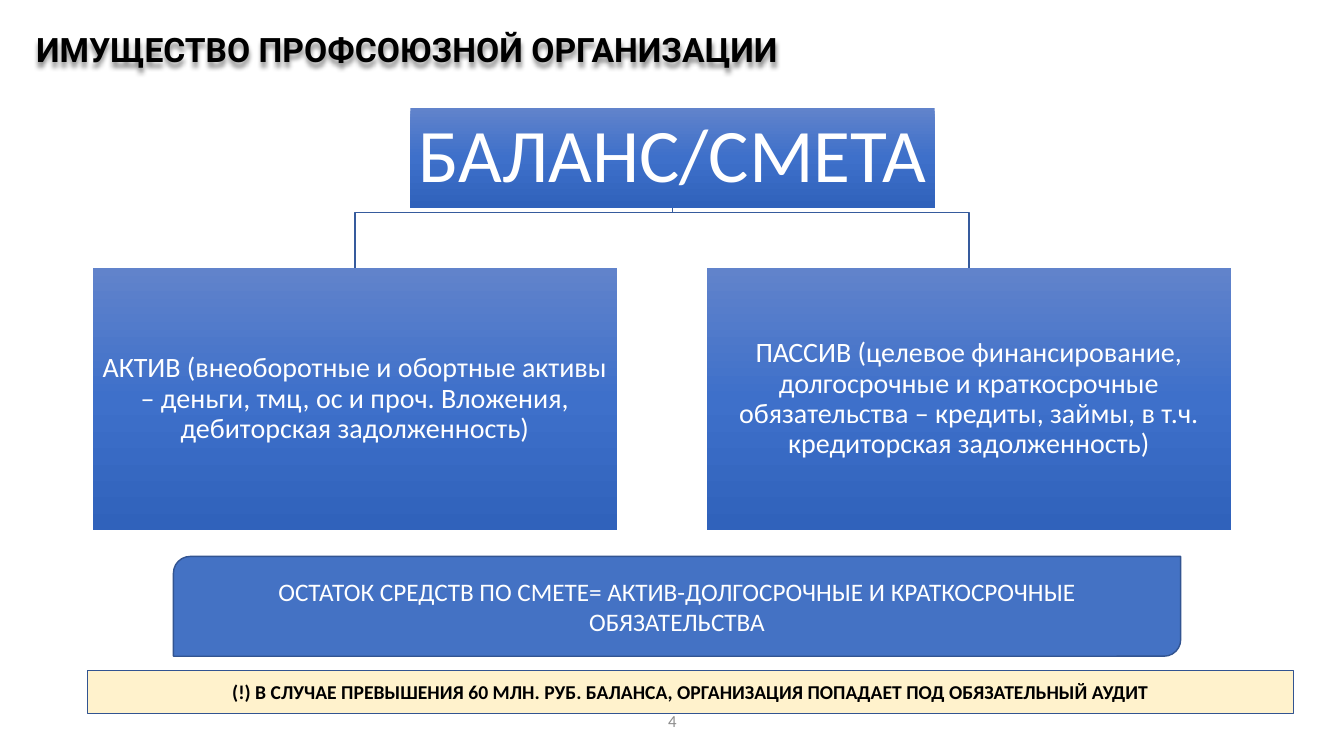
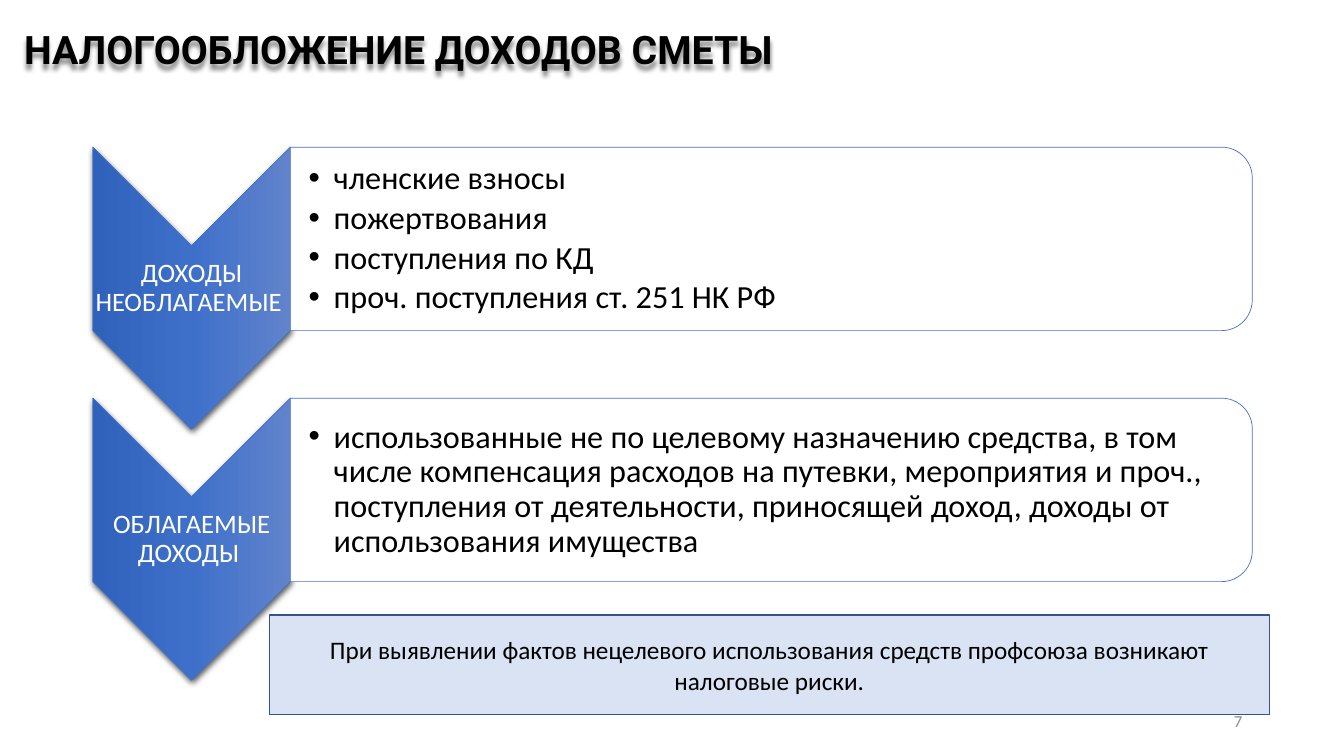
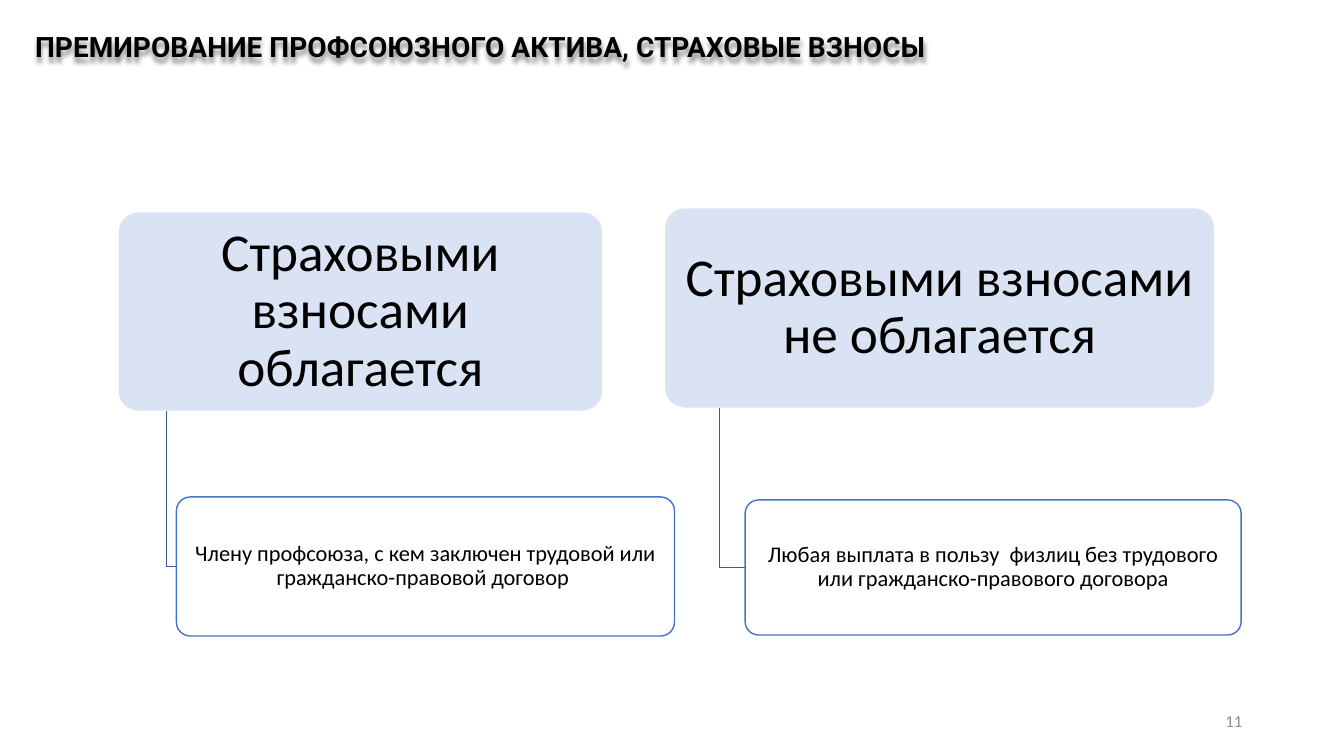
from copy import deepcopy

from lxml import etree
from pptx import Presentation
from pptx.dml.color import RGBColor
from pptx.enum.shapes import MSO_SHAPE
from pptx.enum.text import MSO_ANCHOR, PP_ALIGN
from pptx.oxml.ns import qn
from pptx.util import Inches, Pt

RECTANGLE = MSO_SHAPE.RECTANGLE
ROUNDED = MSO_SHAPE.ROUNDED_RECTANGLE
DIAGONAL_ROUNDED = MSO_SHAPE.ROUND_2_DIAG_RECTANGLE
SAME_SIDE_ROUNDED = MSO_SHAPE.ROUND_2_SAME_RECTANGLE
CHEVRON = MSO_SHAPE.CHEVRON
LEFT, CENTER, RIGHT = PP_ALIGN.LEFT, PP_ALIGN.CENTER, PP_ALIGN.RIGHT
MIDDLE = MSO_ANCHOR.MIDDLE

BLACK = RGBColor(0x00, 0x00, 0x00)
WHITE = RGBColor(0xFF, 0xFF, 0xFF)
GRAY = RGBColor(0x8C, 0x8C, 0x8C)
BLUE = RGBColor(0x44, 0x72, 0xC4)
DARK_BLUE = RGBColor(0x32, 0x54, 0x91)
LINK_BLUE = RGBColor(0x36, 0x5B, 0x9D)
PALE_BLUE = RGBColor(0xDA, 0xE3, 0xF3)
PALE_YELLOW = RGBColor(0xFF, 0xF2, 0xCC)
GRADIENT = (
    RGBColor(0x61, 0x83, 0xCB),
    RGBColor(0x3E, 0x70, 0xCA),
    RGBColor(0x30, 0x62, 0xBB),
)

BODY_FONT = "Calibri"
TITLE_FONT = "Roboto"
TIGHT = 0.9


def write(shape, *lines, size, color=BLACK, font=BODY_FONT, bold=False, align=CENTER,
          inset=(0.1, 0.05, 0.1, 0.05), line_spacing=1.0, space_after=0, bullets=False):
    """Fill a shape with one paragraph per line; inset is left, top, right, bottom."""
    frame = shape.text_frame
    frame.word_wrap = True
    frame.vertical_anchor = MIDDLE
    (frame.margin_left, frame.margin_top,
     frame.margin_right, frame.margin_bottom) = map(Inches, inset)
    for index, line in enumerate(lines):
        paragraph = frame.add_paragraph() if index else frame.paragraphs[0]
        paragraph.alignment = align
        paragraph.line_spacing = line_spacing
        paragraph.space_after = Pt(space_after)
        if bullets:
            add_bullet(paragraph)
        run = paragraph.add_run()
        run.text = line
        run.font.name = font
        run.font.size = Pt(size)
        run.font.bold = bold
        run.font.color.rgb = color


def add_bullet(paragraph):
    properties = paragraph._p.get_or_add_pPr()
    properties.set("marL", str(Inches(0.25)))
    properties.set("indent", str(-Inches(0.25)))
    etree.SubElement(properties, qn("a:buFont"), typeface="Arial")
    etree.SubElement(properties, qn("a:buChar"), char="•")


def add_shadow(shape, blur, distance, opacity):
    """Cast a black shadow straight down; blur and distance are in points."""
    shape.shadow.inherit = False
    effects = shape._element.spPr.find(qn("a:effectLst"))
    shadow = etree.SubElement(effects, qn("a:outerShdw"), blurRad=str(Pt(blur)),
                              dist=str(Pt(distance)), dir="5400000", rotWithShape="0")
    color = etree.SubElement(shadow, qn("a:srgbClr"), val=str(BLACK))
    etree.SubElement(color, qn("a:alpha"), val=str(opacity * 1000))


def fill_gradient(shape):
    shape.fill.gradient()
    shape.fill.gradient_angle = 270
    stop_list = shape.fill._xPr.find(qn("a:gradFill")).find(qn("a:gsLst"))
    stop_list.insert(1, deepcopy(stop_list[0]))
    for index, (stop, color) in enumerate(zip(shape.fill.gradient_stops, GRADIENT)):
        stop.position = index / 2
        stop.color.rgb = color


def add_box(slide, kind, left, top, width, height, fill=None, line=None, line_width=1,
            quarter_turn=False):
    """Add a shape covering the given area; without a fill colour it gets the gradient."""
    if quarter_turn:
        shift = (width - height) / 2
        left, top, width, height = left + shift, top - shift, height, width
    shape = slide.shapes.add_shape(kind, *map(Inches, (left, top, width, height)))
    shape.shadow.inherit = False
    if quarter_turn:
        shape.rotation = 90
    if fill is None:
        fill_gradient(shape)
    else:
        shape.fill.solid()
        shape.fill.fore_color.rgb = fill
    if line is None:
        shape.line.fill.background()
    else:
        shape.line.color.rgb = line
        shape.line.width = Pt(line_width)
    return shape


def add_text(slide, left, top, width, height, *lines, **text_format):
    box = slide.shapes.add_textbox(*map(Inches, (left, top, width, height)))
    write(box, *lines, **text_format)
    return box


def add_path(slide, *points):
    """Draw an open line through points given in inches."""
    start, *rest = [(Inches(x), Inches(y)) for x, y in points]
    builder = slide.shapes.build_freeform(*start)
    builder.add_line_segments(rest, close=False)
    shape = builder.convert_to_shape()
    shape.shadow.inherit = False
    shape.fill.background()
    shape.line.color.rgb = LINK_BLUE
    shape.line.width = Pt(1)


def add_slide(presentation, title, title_area, title_size, number, number_area, number_align):
    slide = presentation.slides.add_slide(presentation.slide_layouts[6])
    heading = add_text(slide, *title_area, title, size=title_size, font=TITLE_FONT,
                       bold=True, align=LEFT, line_spacing=TIGHT)
    add_shadow(heading, blur=3, distance=3, opacity=43)
    left, width = number_area
    add_text(slide, left, 6.95, width, 0.4, number, size=12, color=GRAY, align=number_align)
    return slide


def add_block(slide, left, top, width, height, text, size, inset):
    block = add_box(slide, RECTANGLE, left, top, width, height)
    write(block, text, size=size, color=WHITE, inset=(inset,) * 4, line_spacing=TIGHT)


def add_income_row(slide, top, label, *items):
    chevron = add_box(slide, CHEVRON, 0.92, top, 1.96, 2.8, line=BLUE, line_width=0.5,
                      quarter_turn=True)
    add_shadow(chevron, blur=4.5, distance=1.5, opacity=63)
    add_text(slide, 0.92, top + 0.98, 1.96, 0.84, label, size=19, color=WHITE,
             inset=(0.01,) * 4, line_spacing=TIGHT)
    add_box(slide, SAME_SIDE_ROUNDED, 2.88, top, 9.54, 1.82, fill=WHITE, line=BLUE,
            line_width=0.5, quarter_turn=True)
    add_text(slide, 2.88, top + 0.09, 9.45, 1.64, *items, size=23, align=LEFT,
             inset=(0.18, 0.02, 0.02, 0.02), line_spacing=TIGHT, space_after=3.5,
             bullets=True)


def add_payment_branch(slide, head_area, head_text, detail_area, detail_text):
    """Add a heading card with a detail card hanging from a tenth of its width."""
    head_left, head_top, head_width, head_height = head_area
    detail_left, detail_top, _, detail_height = detail_area
    head = add_box(slide, ROUNDED, *head_area, fill=PALE_BLUE, line=WHITE)
    write(head, head_text, size=38, inset=(0.08, 0.05, 0.08, 0.05), line_spacing=TIGHT)
    stem = head_left + head_width / 10
    middle = detail_top + detail_height / 2
    add_path(slide, (stem, head_top + head_height), (stem, middle), (detail_left, middle))
    detail = add_box(slide, ROUNDED, *detail_area, fill=WHITE, line=BLUE)
    write(detail, detail_text, size=16, inset=(0.03, 0.02, 0.03, 0.02), line_spacing=TIGHT)
    for card in (head, detail):
        card.adjustments[0] = 0.1


def build_balance(presentation):
    slide = add_slide(presentation, "ИМУЩЕСТВО ПРОФСОЮЗНОЙ ОРГАНИЗАЦИИ",
                      (0.26, 0.2, 9.53, 0.63), 24, "4", (4.42, 4.5), CENTER)
    block_width, root_left, root_bottom, child_top = 5.2, 4.07, 2.06, 2.66
    root_center = root_left + block_width / 2
    children = (
        (0.92, "АКТИВ (внеоборотные и обортные активы – деньги, тмц, ос и проч. "
               "Вложения, дебиторская задолженность)"),
        (7.01, "ПАССИВ (целевое финансирование, долгосрочные и краткосрочные "
               "обязательства – кредиты, займы, в т.ч. кредиторская задолженность)"),
    )
    for left, text in children:
        center = left + block_width / 2
        bend = root_bottom + 0.05
        add_path(slide, (root_center, root_bottom), (root_center, bend),
                 (center, bend), (center, child_top))
        add_block(slide, left, child_top, block_width, 2.6, text, 20, 0.01)
    add_block(slide, root_left, 1.07, block_width, 0.99, "БАЛАНС/СМЕТА", 54, 0.04)

    remainder = add_box(slide, DIAGONAL_ROUNDED, 1.72, 5.52, 9.99, 0.99,
                        fill=BLUE, line=DARK_BLUE)
    write(remainder, "ОСТАТОК СРЕДСТВ ПО СМЕТЕ= АКТИВ-ДОЛГОСРОЧНЫЕ И КРАТКОСРОЧНЫЕ "
          "ОБЯЗАТЕЛЬСТВА", size=18, color=WHITE)
    warning = add_box(slide, RECTANGLE, 0.87, 6.65, 11.96, 0.43,
                      fill=PALE_YELLOW, line=DARK_BLUE)
    write(warning, "(!) В СЛУЧАЕ ПРЕВЫШЕНИЯ 60 МЛН. РУБ. БАЛАНСА, ОРГАНИЗАЦИЯ ПОПАДАЕТ "
          "ПОД ОБЯЗАТЕЛЬНЫЙ АУДИТ", size=14, bold=True)


def build_income(presentation):
    slide = add_slide(presentation, "НАЛОГООБЛОЖЕНИЕ ДОХОДОВ СМЕТЫ",
                      (0.14, 0.22, 8.26, 0.59), 28, "7", (9.42, 3), RIGHT)
    add_income_row(slide, 1.46, "ДОХОДЫ НЕОБЛАГАЕМЫЕ ", "членские взносы", "пожертвования",
                   "поступления по КД", "проч. поступления ст. 251 НК РФ")
    add_income_row(slide, 3.95, "ОБЛАГАЕМЫЕ ДОХОДЫ ",
                   "использованные не по целевому назначению средства, в том числе "
                   "компенсация расходов на путевки, мероприятия и проч., поступления от "
                   "деятельности, приносящей доход, доходы от использования имущества")
    risk = add_box(slide, RECTANGLE, 2.67, 6.1, 9.92, 0.99, fill=PALE_BLUE, line=DARK_BLUE)
    write(risk, "При выявлении фактов нецелевого использования средств профсоюза возникают "
          "налоговые риски.", size=18)


def build_bonuses(presentation):
    slide = add_slide(presentation, "ПРЕМИРОВАНИЕ ПРОФСОЮЗНОГО АКТИВА, СТРАХОВЫЕ ВЗНОСЫ",
                      (0.25, 0, 10.43, 0.96), 20, "11", (9.42, 3), RIGHT)
    add_payment_branch(slide, (1.17, 2.1, 4.81, 1.98), "Страховыми взносами облагается",
                       (1.75, 4.93, 4.94, 1.38),
                       "Члену профсоюза, с кем заключен трудовой или "
                       "гражданско-правовой договор ")
    add_payment_branch(slide, (6.59, 2.06, 5.46, 1.99), "Страховыми взносами не облагается",
                       (7.39, 4.96, 4.92, 1.34),
                       "Любая выплата в пользу  физлиц без трудового или "
                       "гражданско-правового договора")


def main():
    presentation = Presentation()
    presentation.slide_width = Inches(13.33)
    presentation.slide_height = Inches(7.5)
    build_balance(presentation)
    build_income(presentation)
    build_bonuses(presentation)
    presentation.save("out.pptx")


if __name__ == "__main__":
    main()
